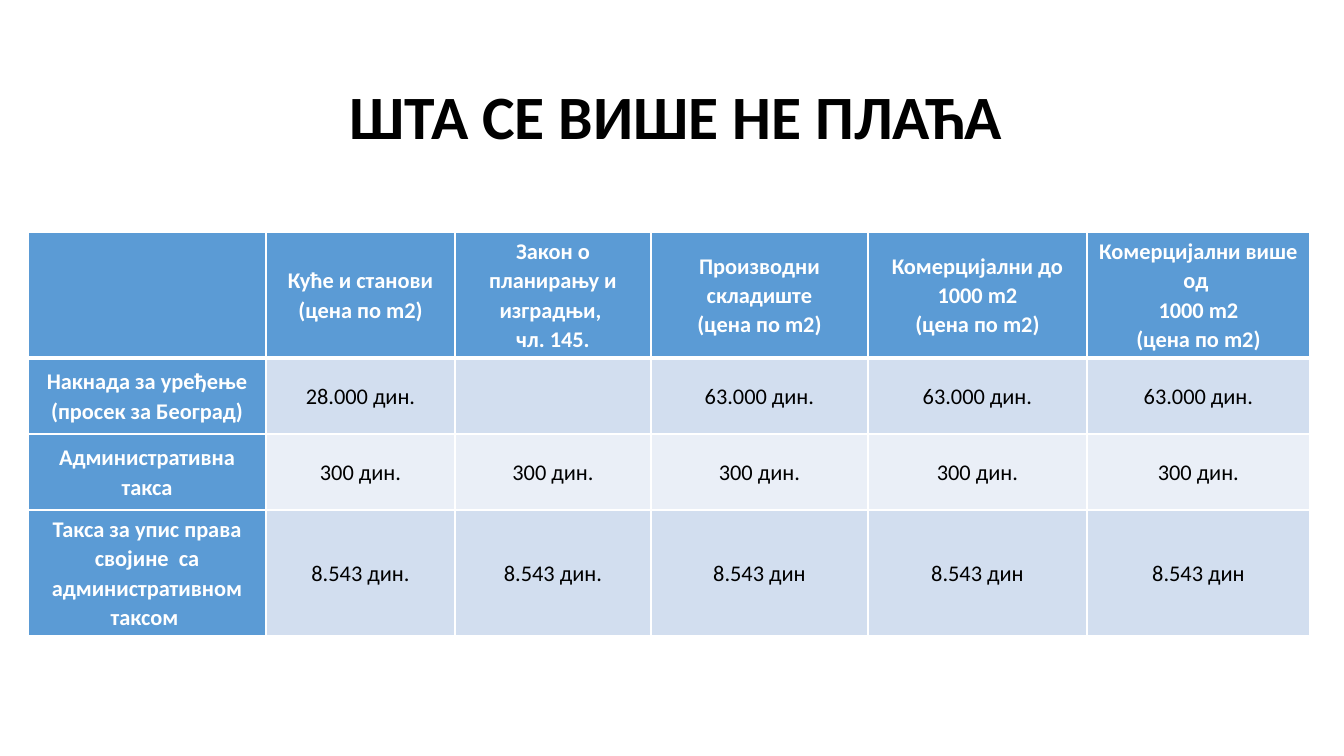
from pptx import Presentation
from pptx import util as u
from pptx.dml.color import RGBColor
from pptx.enum import text
from pptx.oxml import parse_xml
from pptx.oxml.ns import nsdecls

COLORS = {
    "ink": "000000",
    "white": "FFFFFF",
    "header": "5B9BD5",
    "dark_band": "D2DEEF",
    "light_band": "EAEFF7",
}
EMU_PER_PX = 914400 / 100.8


def px(length):
    return u.Emu(round(length * EMU_PER_PX))


def write_text(frame, content, size=16, color="ink", bold=False, spacing=1.07):
    frame.word_wrap = True
    frame.vertical_anchor = text.MSO_ANCHOR.MIDDLE
    for index, line in enumerate(content.split("\n")):
        paragraph = frame.add_paragraph() if index else frame.paragraphs[0]
        paragraph.alignment = text.PP_ALIGN.CENTER
        paragraph.line_spacing = spacing
        if line:
            run = paragraph.add_run()
            run.text = line
            run.font.name = "Calibri"
            run.font.size = u.Pt(size)
            run.font.bold = bold
            run.font.color.rgb = RGBColor.from_string(COLORS[color])


class FeeSlide:
    def __init__(self, presentation):
        self.slide = presentation.slides.add_slide(presentation.slide_layouts[6])

    def title(self, content, left, top, width, height):
        heading = self.slide.shapes.add_textbox(px(left), px(top), px(width), px(height))
        write_text(heading.text_frame, content, size=44, bold=True, spacing=0.9)

    def table(self, rows, left, top, widths, heights):
        fees = self.slide.shapes.add_table(
            len(rows), len(widths), px(left), px(top), px(sum(widths)), px(sum(heights))
        ).table
        for column, width in zip(fees.columns, widths):
            column.width = px(width)
        for row, height in zip(fees.rows, heights):
            row.height = px(height)
        for r, row in enumerate(rows):
            for c, content in enumerate(row):
                self.cell(fees.cell(r, c), content, r, c)

    def cell(self, cell, content, r, c):
        is_header = r == 0 or c == 0
        band = "dark_band" if r % 2 else "light_band"
        cell.margin_left = cell.margin_right = px(7)
        cell.margin_top = cell.margin_bottom = px(4)
        write_text(cell.text_frame, content, color="white" if is_header else "ink", bold=is_header)
        cell.vertical_anchor = text.MSO_ANCHOR.MIDDLE
        for side in "LRTB":
            thick = (r == 0 and side == "B") or (r == 1 and side == "T")
            self.border(cell, side, 3 if thick else 1)
        cell.fill.solid()
        cell.fill.fore_color.rgb = RGBColor.from_string(COLORS["header" if is_header else band])

    def border(self, cell, side, points):
        cell._tc.get_or_add_tcPr().append(parse_xml(
            f'<a:ln{side} {nsdecls("a")} w="{u.Pt(points)}"><a:solidFill>'
            f'<a:srgbClr val="{COLORS["white"]}"/></a:solidFill></a:ln{side}>'
        ))


def main():
    presentation = Presentation()
    presentation.slide_width, presentation.slide_height = px(1344), px(756)
    slide = FeeSlide(presentation)
    slide.title("ШТА СЕ ВИШЕ НЕ ПЛАЋА", 97, 47, 1159, 146)
    unit = "(цена по m2)"
    fees = [
        ["", f"Куће и станови\n{unit}", "Закон о планирању и изградњи, \nчл. 145.",
         f"Производни складиште\n{unit}", f"Комерцијални до 1000 m2\n{unit}",
         f"Комерцијални више од \n1000 m2\n{unit}"],
        ["Накнада за уређење (просек за Београд)", "28.000 дин.", ""] + ["63.000 дин."] * 3,
        ["Административна такса"] + ["300 дин."] * 5,
        ["Такса за упис права својине  са административном таксом "]
        + ["8.543 дин."] * 2 + ["8.543 дин"] * 3,
    ]
    slide.table(fees, 28, 232, [238, 189, 196, 217, 219, 223], [126, 76, 76, 126])
    presentation.save("out.pptx")


if __name__ == "__main__":
    main()
